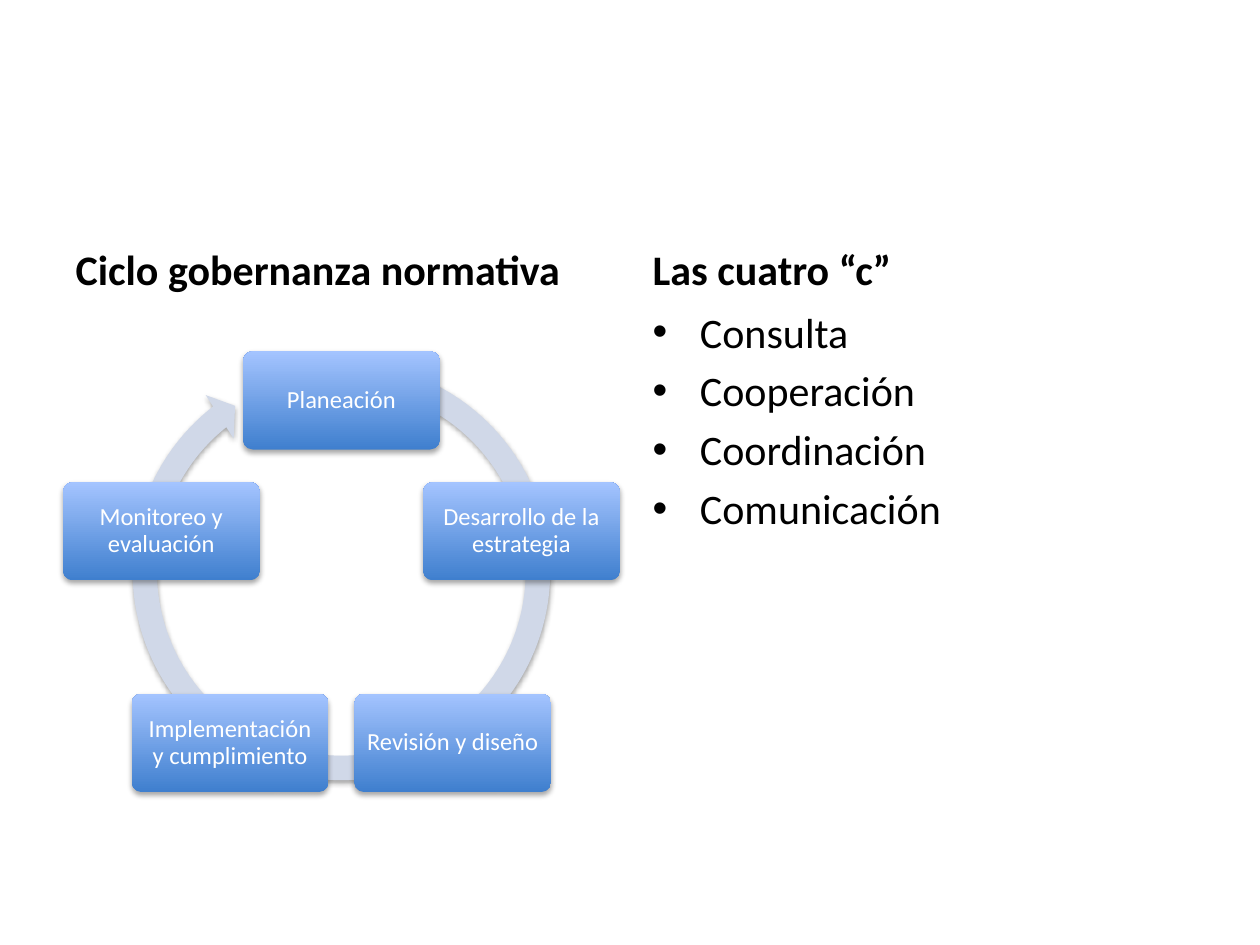
import math

import lxml.etree
import pptx
import pptx.dml.color
import pptx.enum.shapes
import pptx.enum.text
import pptx.oxml.ns
import pptx.util

Pt = pptx.util.Pt
RGB = pptx.dml.color.RGBColor
SHAPE = pptx.enum.shapes.MSO_SHAPE
ALIGN = pptx.enum.text.PP_ALIGN
ANCHOR = pptx.enum.text.MSO_ANCHOR

BLACK = RGB(0x00, 0x00, 0x00)
WHITE = RGB(0xFF, 0xFF, 0xFF)
RING = RGB(0xD0, 0xD8, 0xE8)
BLUE_DARK = RGB(0x3F, 0x7F, 0xCE)
BLUE_LIGHT = RGB(0xA4, 0xC4, 0xFF)

COMPARISON_LAYOUT = 4
HEADING_LEFT, HEADING_RIGHT, LIST_RIGHT = 1, 3, 4

STEPS = [
    "Planeación",
    "Desarrollo de la estrategia",
    "Revisión y diseño",
    "Implementación y cumplimiento",
    "Monitoreo y evaluación",
]
FOUR_CS = ["Consulta", "Cooperación", "Coordinación", "Comunicación"]


def apply(target, values):
    for name, value in values.items():
        setattr(target, name, value)


class SlideBuilder:
    """Holds the style and the current slide."""

    font = "Calibri"
    step_size = (112.4, 56.2)

    def __init__(self, deck):
        self.page = deck.slides.add_slide(deck.slide_layouts[COMPARISON_LAYOUT])
        self.cycle = self.page.shapes.add_group_shape()

    def paragraphs(self, frame, lines, color, font, paragraph):
        for index, line in enumerate(lines):
            para = frame.paragraphs[0] if index == 0 else frame.add_paragraph()
            apply(para, paragraph)
            span = para.add_run()
            span.text = line
            apply(span.font, {"name": self.font, **font})
            span.font.color.rgb = color

    def body(self, index, lines, place, bold=False, anchor=ANCHOR.TOP):
        box = self.page.placeholders[index]
        left, top, width, height = map(Pt, place)
        apply(box, {"left": left, "top": top, "width": width, "height": height})
        box.text_frame.vertical_anchor = anchor
        self.paragraphs(box.text_frame, lines, BLACK,
                        {"size": Pt(24), "bold": bold}, {"space_before": Pt(4.8)})

    def shadow(self, shape):
        qn = pptx.oxml.ns.qn
        shape.shadow.inherit = False
        effects = shape.element.spPr.find(qn("a:effectLst"))
        outer = lxml.etree.SubElement(
            effects, qn("a:outerShdw"), blurRad=str(Pt(3.1)),
            dist=str(Pt(1.8)), dir="5400000", rotWithShape="0")
        color = lxml.etree.SubElement(outer, qn("a:srgbClr"), val=str(BLACK))
        lxml.etree.SubElement(color, qn("a:alpha"), val="35000")

    def shape(self, kind, center, size, adjustments):
        (x, y), (width, height) = center, size
        shape = self.cycle.shapes.add_shape(
            kind, Pt(x - width / 2), Pt(y - height / 2), Pt(width), Pt(height))
        for index, value in enumerate(adjustments):
            shape.adjustments[index] = value
        shape.line.fill.background()
        self.shadow(shape)
        return shape

    def ring(self, center, diameter):
        arrow = self.shape(SHAPE.CIRCULAR_ARROW, center, (diameter, diameter),
                           [5.5 / 100, 3.31, 139.06, 173.07, 5.8 / 100])
        arrow.fill.solid()
        arrow.fill.fore_color.rgb = RING

    def step(self, text, center):
        box = self.shape(SHAPE.ROUNDED_RECTANGLE, center, self.step_size, [0.1])
        box.fill.gradient()
        box.fill.gradient_angle = 90
        for stop, color in zip(box.fill.gradient_stops, (BLUE_DARK, BLUE_LIGHT)):
            stop.color.rgb = color
        margins = {f"margin_{side}": Pt(5.5)
                   for side in ("left", "top", "right", "bottom")}
        apply(box.text_frame, {"word_wrap": True,
                               "vertical_anchor": ANCHOR.MIDDLE, **margins})
        self.paragraphs(box.text_frame, [text], WHITE, {"size": Pt(14)},
                        {"alignment": ALIGN.CENTER, "line_spacing": 0.9})


def main():
    deck = pptx.Presentation()
    deck.slide_width, deck.slide_height = Pt(720), Pt(540)
    builder = SlideBuilder(deck)

    # Headings and the list on the right
    left, right, width = 36, 365.75, 318.2
    builder.body(HEADING_LEFT, ["Ciclo gobernanza normativa"],
                 (left, 120.9, width, 50.4), True, ANCHOR.BOTTOM)
    builder.body(HEADING_RIGHT, ["Las cuatro “c”"],
                 (right, 120.9, width, 50.4), True, ANCHOR.BOTTOM)
    builder.body(LIST_RIGHT, FOUR_CS, (right, 171.3, width, 311.1))

    # Cycle: steps evenly spread on a circle, clockwise from the top
    center_x, center_y, radius = 195.1, 337, 108.2
    builder.ring((center_x, 326.5), 254.2)
    for index, text in enumerate(STEPS):
        angle = math.tau * index / len(STEPS)
        builder.step(text, (center_x + radius * math.sin(angle),
                            center_y - radius * math.cos(angle)))

    # Unused placeholders
    for box in list(builder.page.placeholders):
        if not box.text_frame.text:
            box.element.getparent().remove(box.element)

    deck.save("out.pptx")


if __name__ == "__main__":
    main()
